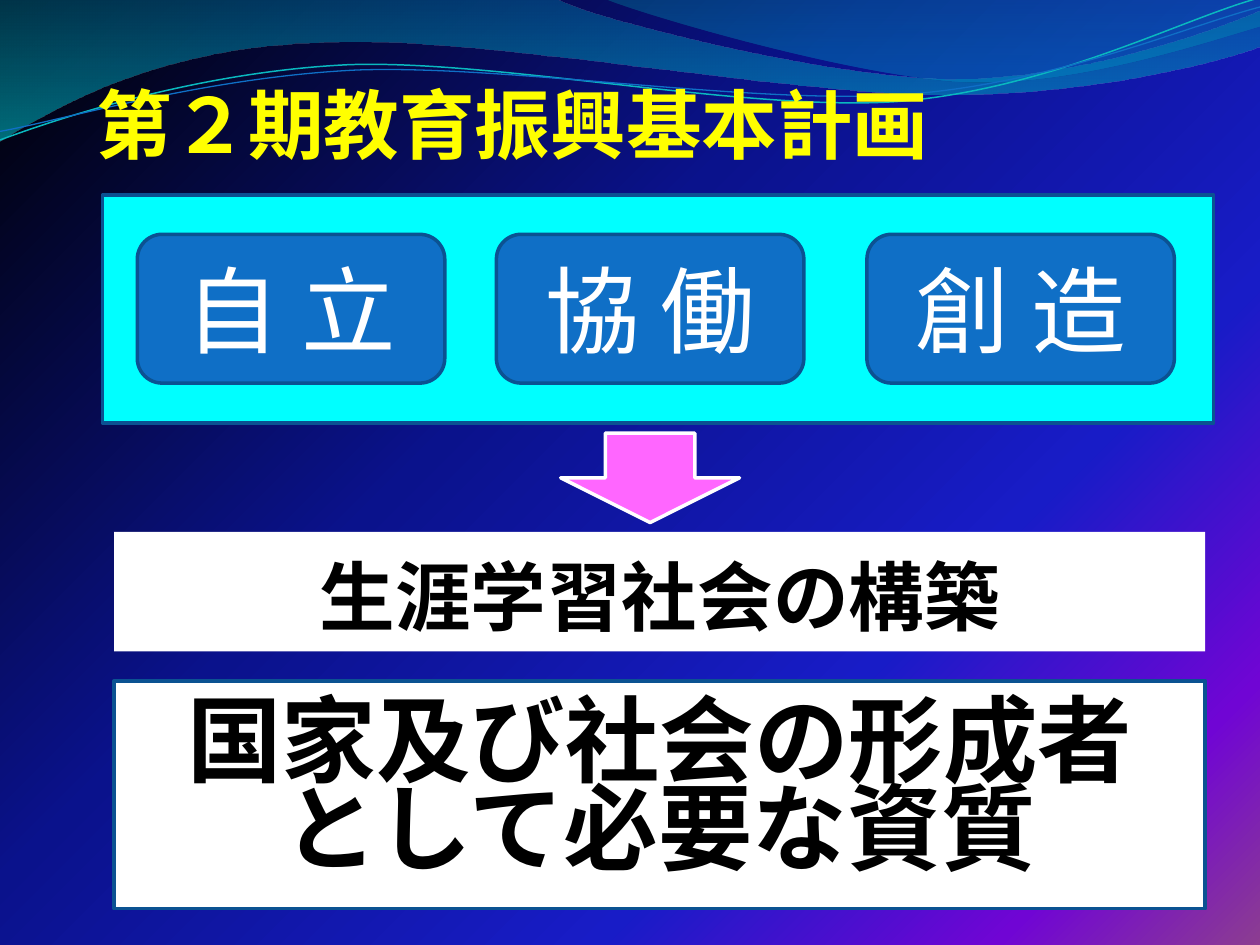
from lxml import etree
from pptx import Presentation
from pptx.dml.color import RGBColor
from pptx.enum.shapes import MSO_SHAPE
from pptx.enum.text import MSO_ANCHOR, PP_ALIGN
from pptx.oxml.ns import qn
from pptx.util import Pt

RECT = MSO_SHAPE.RECTANGLE
ROUND = MSO_SHAPE.ROUNDED_RECTANGLE
ARROW = MSO_SHAPE.DOWN_ARROW
TOP, MIDDLE, BOTTOM = MSO_ANCHOR.TOP, MSO_ANCHOR.MIDDLE, MSO_ANCHOR.BOTTOM
LEFT, CENTER = PP_ALIGN.LEFT, PP_ALIGN.CENTER
BLACK = RGBColor(0x00, 0x00, 0x00)
WHITE = RGBColor(0xFF, 0xFF, 0xFF)
YELLOW = RGBColor(0xFF, 0xFF, 0x00)
CYAN = RGBColor(0x00, 0xFF, 0xFF)
PINK = RGBColor(0xFF, 0x66, 0xFF)
BLUE = RGBColor(0x0F, 0x6F, 0xC6)
NAVY = RGBColor(0x0B, 0x52, 0x92)
TEAL = RGBColor(0x0A, 0xB8, 0xBF)
NIGHT = [(0, RGBColor(0x00, 0x00, 0x00), 100), (40, RGBColor(0x0A, 0x12, 0x8C), 100),
         (70, RGBColor(0x18, 0x1C, 0xC7), 100), (88, RGBColor(0x70, 0x05, 0xD4), 100),
         (100, RGBColor(0x8C, 0x3D, 0x91), 100)]
SEA = [(0, RGBColor(0x00, 0x74, 0xA1), 45), (100, RGBColor(0x00, 0xC6, 0xCF), 55)]
LAGOON = [(0, RGBColor(0x00, 0xA1, 0xA9), 30), (80, RGBColor(0x00, 0x8B, 0xBF), 45)]
CJK = "Noto Sans CJK JP"


def shade(root, stops, angle):
    solid = root.find(".//" + qn("a:solidFill"))
    grad = etree.Element(qn("a:gradFill"), rotWithShape="1")
    group = etree.SubElement(grad, qn("a:gsLst"))
    for pos, color, alpha in stops:
        stop = etree.SubElement(group, qn("a:gs"), pos=str(pos * 1000))
        tint = etree.SubElement(stop, qn("a:srgbClr"), val=str(color))
        etree.SubElement(tint, qn("a:alpha"), val=str(alpha * 1000))
    etree.SubElement(grad, qn("a:lin"), ang=str(angle * 60000), scaled="0")
    solid.getparent().replace(solid, grad)


def write(shape, lines, size, color, bold, name, align, anchor,
          space=None, head=3.6, foot=3.6):
    frame = shape.text_frame
    frame.word_wrap = True
    frame.vertical_anchor = anchor
    frame.margin_top, frame.margin_bottom = Pt(head), Pt(foot)
    frame.text = "\n".join(lines)
    for para in frame.paragraphs:
        para.alignment = align
        para.line_spacing = space
        font = para.font
        font.size, font.bold, font.name = Pt(size), bold, name
        font.color.rgb = color
        east = etree.Element(qn("a:ea"), typeface=CJK)
        para._p.pPr.find(".//" + qn("a:latin")).addnext(east)


deck = Presentation()
deck.slide_width, deck.slide_height = Pt(720), Pt(540)
slide = deck.slides.add_slide(deck.slide_layouts[5])
shapes = slide.shapes
slide.background.fill.solid()
slide.background.fill.fore_color.rgb = BLACK
shade(slide._element, NIGHT, 45)

waves = [
    ((0, 0), [(317, -1), (343, 12, 478, 45, 546, 45), (614, 45, 690, 19, 720, 6),
              (721, 26), (708, 32, 626, 55, 537, 54), (448, 54, 275, 20, 185, 24),
              (93, 26, 33, 60, -1, 81)], SEA, None, 0),
    ((345, -1), [(366, 8, 491, 45, 554, 47), (616, 49, 692, 23, 720, 15),
                 (720, 0)], LAGOON, None, 0),
    ((-1.4, 63), [(34.2, 51.7, 114.3, 29.4, 199.4, 29.4),
                  (284.4, 30.4, 425.8, 67.2, 512, 65.2),
                  (599.3, 62.3, 676.1, 25.9, 720.6, 15.9)], None, TEAL, 0.85),
    ((-1.1, 58.1), [(33.2, 53.7, 118.2, 32.6, 204.3, 32.7),
                    (290.3, 33.7, 429.1, 63.3, 515.3, 61.4),
                    (601.5, 59.4, 678.9, 30, 721.4, 21)], None, BLUE, 0.75),
]
for start, steps, stops, color, width in waves:
    pen = shapes.build_freeform(Pt(start[0]), Pt(start[1]))
    pen.add_line_segments([(Pt(s[-2]), Pt(s[-1])) for s in steps],
                          close=stops is not None)
    wave = pen.convert_to_shape()
    sides = wave._element.findall(".//" + qn("a:lnTo"))
    for side, step in zip(sides, steps):
        if len(step) == 6:
            bend = etree.Element(qn("a:cubicBezTo"))
            for x, y in zip(step[::2], step[1::2]):
                etree.SubElement(bend, qn("a:pt"), x=str(Pt(x) - wave.left),
                                 y=str(Pt(y) - wave.top))
            side.getparent().replace(side, bend)
    wave.shadow.inherit = False
    if stops:
        wave.fill.solid()
        wave.fill.fore_color.rgb = WHITE
        shade(wave._element, stops, 90)
        wave.line.fill.background()
    else:
        wave.rotation = 357.3
        wave.fill.background()
        wave.line.color.rgb = color
        wave.line.width = Pt(width)

title = shapes.title
title.left, title.top, title.width, title.height = Pt(48.2), Pt(31.7), Pt(635), Pt(118.8)
write(title, ["第２期教育振興基本計画"], 43.2, YELLOW, True, CJK, LEFT, TOP, head=12.8)

boxes = [
    (RECT, 58.6, 111.4, 635, 130.3, CYAN, NAVY, None),
    (RECT, 65.2, 303.9, 623.5, 68.4, WHITE, None,
     (["生涯学習社会の構築"], 43.2, BLACK, True, CJK, CENTER, BOTTOM, None, 3.6, 6)),
    (ARROW, 320.4, 247.5, 102.2, 51.1, PINK, WHITE, None),
    (RECT, 65.2, 389, 623.5, 130.3, WHITE, NAVY,
     (["国家及び社会の形成者", "として必要な資質"], 54, BLACK, True, "Arial",
      CENTER, MIDDLE, Pt(50))),
]
for x, word in [(78.5, "自 立"), (495.4, "創 造"), (283.7, "協 働")]:
    boxes.append((ROUND, x, 133.9, 175.7, 85, BLUE, NAVY,
                  ([word], 54, WHITE, False, "Arial", CENTER, MIDDLE)))
for kind, x, y, w, h, fill, line, text in boxes:
    box = shapes.add_shape(kind, Pt(x), Pt(y), Pt(w), Pt(h))
    box.shadow.inherit = False
    box.fill.solid()
    box.fill.fore_color.rgb = fill
    if line is None:
        box.line.fill.background()
    else:
        box.line.color.rgb = line
        box.line.width = Pt(2)
    if text:
        write(box, *text)
    if kind == RECT and fill == CYAN:
        shapes._spTree.append(title._element)

deck.save("out.pptx")
